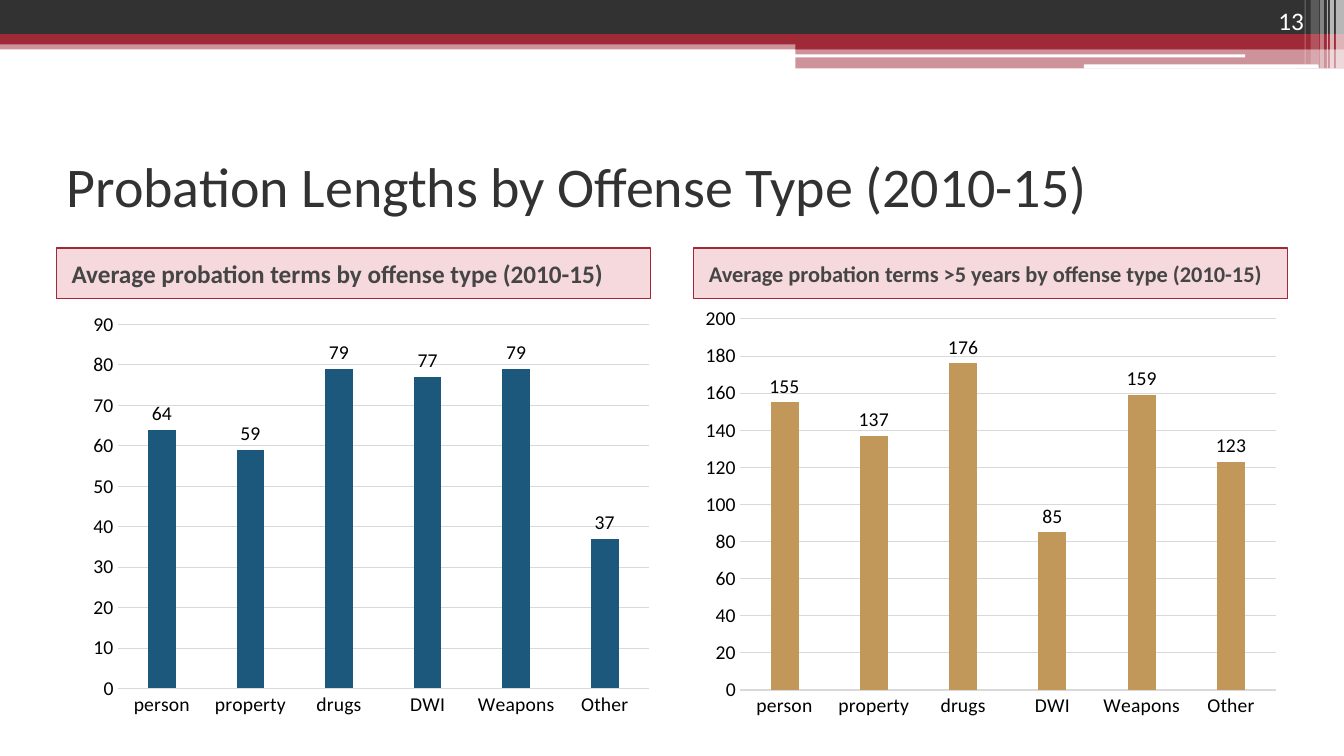
from dataclasses import dataclass
from typing import Any, Optional

from lxml.etree import SubElement
from pptx import Presentation
from pptx.chart.data import CategoryChartData
from pptx.dml.color import RGBColor
from pptx.enum.chart import XL_CHART_TYPE, XL_LABEL_POSITION, XL_TICK_MARK
from pptx.enum.shapes import MSO_SHAPE
from pptx.enum.text import MSO_ANCHOR, MSO_AUTO_SIZE, PP_ALIGN
from pptx.oxml import parse_xml
from pptx.oxml.ns import nsdecls, qn
from pptx.util import Inches, Pt

DARK = RGBColor(0x32, 0x32, 0x32)
RED = RGBColor(0x9F, 0x29, 0x36)
PINK = RGBColor(0xD9, 0x6B, 0x77)
GRAY = RGBColor(0x45, 0x45, 0x45)
PALE = RGBColor(0xD9, 0xD9, 0xD9)
BLUE = RGBColor(0x1B, 0x58, 0x7C)
GOLD = RGBColor(0xC1, 0x98, 0x59)
WHITE = RGBColor(0xFF, 0xFF, 0xFF)
BLACK = RGBColor(0, 0, 0)

FONT = "Calibri"
KINDS = ["person", "property", "drugs", "DWI", "Weapons", "Other"]


@dataclass
class Band:
    left: float
    top: float
    width: float
    height: float
    color: RGBColor
    alpha: int = 100
    form: MSO_SHAPE = MSO_SHAPE.RECTANGLE


@dataclass
class Panel:
    left: float
    slot: int
    label: str
    size: int
    color: RGBColor
    values: list[int]
    top: int
    step: int
    plot: Optional[tuple[float, float, float, float]] = None


ROUND = MSO_SHAPE.ROUNDED_RECTANGLE
BANDS = [
    Band(0, 0.4, 13.33, 0.09, RED, 50),
    Band(0, 0, 13.33, 0.34, DARK),
    Band(0, 0.34, 13.33, 0.1, RED),
    Band(7.89, 0.39, 5.44, 0.1, RED),
    Band(7.89, 0.48, 5.44, 0.2, RED, 50),
    Band(7.88, 0.54, 4.47, 0.03, WHITE, form=ROUND),
    Band(10.75, 0.64, 2.33, 0.04, WHITE, form=ROUND),
    Band(13.25, 0, 0.08, 0.68, WHITE, 65),
    Band(13.19, 0, 0.04, 0.68, WHITE, 65),
    Band(13.16, 0, 0.01, 0.68, WHITE, 60),
    Band(13.09, 0, 0.04, 0.68, WHITE, 40),
    Band(13, 0, 0.08, 0.64, WHITE, 20),
    Band(12.94, 0, 0.01, 0.64, WHITE, 30),
]
PANELS = [
    Panel(6.88, 3, "Average probation terms >5 years by offense type (2010-15)", 16,
          GOLD, [155, 137, 176, 85, 159, 123], 200, 20),
    Panel(0.56, 1, "Average probation terms by offense type (2010-15)", 18,
          BLUE, [64, 59, 79, 77, 79, 37], 90, 10, (0.103, 0.061, 0.895, 0.85)),
]


def apply(item: Any, **values: Any) -> None:
    for name, value in values.items():
        setattr(item, name, value)


def place(shape: Any, left: float, top: float, width: float, height: float) -> None:
    apply(shape, left=Inches(left), top=Inches(top),
          width=Inches(width), height=Inches(height))


def paint(shape: Any, color: RGBColor, alpha: int) -> None:
    shape.fill.solid()
    shape.fill.fore_color.rgb = color
    if alpha < 100:
        tint = shape.fill._xPr.find(qn("a:solidFill"))[0]
        SubElement(tint, qn("a:alpha")).set("val", str(alpha * 1000))


def style(font: Any, size: int, color: RGBColor, bold: bool = False) -> None:
    apply(font, name=FONT, size=Pt(size), bold=bold)
    font.color.rgb = color


def write(shape: Any, text: str, size: int, color: RGBColor, bold: bool = False,
          anchor: MSO_ANCHOR = MSO_ANCHOR.MIDDLE,
          align: PP_ALIGN = PP_ALIGN.LEFT) -> None:
    frame = shape.text_frame
    apply(frame, text=text, word_wrap=True, auto_size=MSO_AUTO_SIZE.NONE,
          vertical_anchor=anchor)
    line = frame.paragraphs[0]
    line.alignment = align
    style(line.runs[0].font, size, color, bold)


def add_band(slide: Any, band: Band) -> None:
    shape = slide.shapes.add_shape(band.form, 0, 0, 0, 0)
    place(shape, band.left, band.top, band.width, band.height)
    shape.shadow.inherit = False
    shape.line.fill.background()
    paint(shape, band.color, band.alpha)


def add_label(slide: Any, panel: Panel) -> None:
    shape = slide.placeholders[panel.slot]
    place(shape, panel.left, 2.46, 5.89, 0.5)
    paint(shape, PINK, 25)
    shape.line.color.rgb = RED
    shape.line.width = Pt(1)
    write(shape, panel.label, panel.size, GRAY, True)
    shape.text_frame.margin_left = Inches(0.15)
    shape.text_frame.paragraphs[0].space_before = Pt(3)


def set_plot(chart: Any, box: tuple[float, float, float, float]) -> None:
    area = chart.element.find(".//" + qn("c:plotArea"))
    for old in area.findall(qn("c:layout")):
        area.remove(old)
    parts = "".join(f'<c:{key} val="{value}"/>' for key, value in zip("xywh", box))
    area.insert(0, parse_xml(
        f'<c:layout {nsdecls("c")}><c:manualLayout><c:layoutTarget val="inner"/>'
        f'<c:xMode val="edge"/><c:yMode val="edge"/>{parts}'
        '</c:manualLayout></c:layout>'))


def add_bars(slide: Any, panel: Panel) -> None:
    data = CategoryChartData(number_format="###0")
    data.categories = KINDS
    data.add_series("Series 1", panel.values)
    chart = slide.shapes.add_chart(
        XL_CHART_TYPE.COLUMN_CLUSTERED, Inches(panel.left), Inches(2.96),
        Inches(5.89), Inches(4.25), data).chart
    apply(chart, has_legend=False, has_title=False)
    style(chart.font, 14, BLACK)

    # Axes
    cat, val = chart.category_axis, chart.value_axis
    for axis in (cat, val):
        apply(axis, major_tick_mark=XL_TICK_MARK.NONE, minor_tick_mark=XL_TICK_MARK.NONE)
        style(axis.tick_labels.font, 14, BLACK)
    apply(val, minimum_scale=0, maximum_scale=panel.top, major_unit=panel.step,
          has_major_gridlines=True)
    apply(val.tick_labels, number_format="###0", number_format_is_linked=False)
    val.format.line.fill.background()
    for line in (cat.format.line, val.major_gridlines.format.line):
        line.color.rgb = PALE
        line.width = Pt(0.75)

    # Columns and their values
    plot = chart.plots[0]
    apply(plot, gap_width=219, overlap=-27, vary_by_categories=False,
          has_data_labels=True)
    fill = plot.series[0].format.fill
    fill.solid()
    fill.fore_color.rgb = panel.color
    apply(plot.data_labels, show_value=True, position=XL_LABEL_POSITION.OUTSIDE_END,
          number_format="###0", number_format_is_linked=False)
    style(plot.data_labels.font, 14, BLACK)
    if panel.plot:
        set_plot(chart, panel.plot)


def main() -> None:
    deck = Presentation()
    apply(deck, slide_width=Inches(13.33), slide_height=Inches(7.5))
    slide = deck.slides.add_slide(deck.slide_layouts[4])
    for slot in (2, 4):
        spare = slide.placeholders[slot].element
        spare.getparent().remove(spare)

    # Header bands
    for band in BANDS:
        add_band(slide, band)

    # Title and page number
    title = slide.shapes.title
    place(title, 0.56, 1.25, 12.22, 1.17)
    write(title, "Probation Lengths by Offense Type (2010-15)", 40, DARK)
    page = slide.shapes.add_textbox(Inches(11.92), 0, Inches(1.11), Inches(0.4))
    write(page, "13", 18, WHITE, anchor=MSO_ANCHOR.BOTTOM, align=PP_ALIGN.RIGHT)

    # Labelled charts
    for panel in PANELS:
        add_label(slide, panel)
        add_bars(slide, panel)
    deck.save("out.pptx")


if __name__ == "__main__":
    main()
